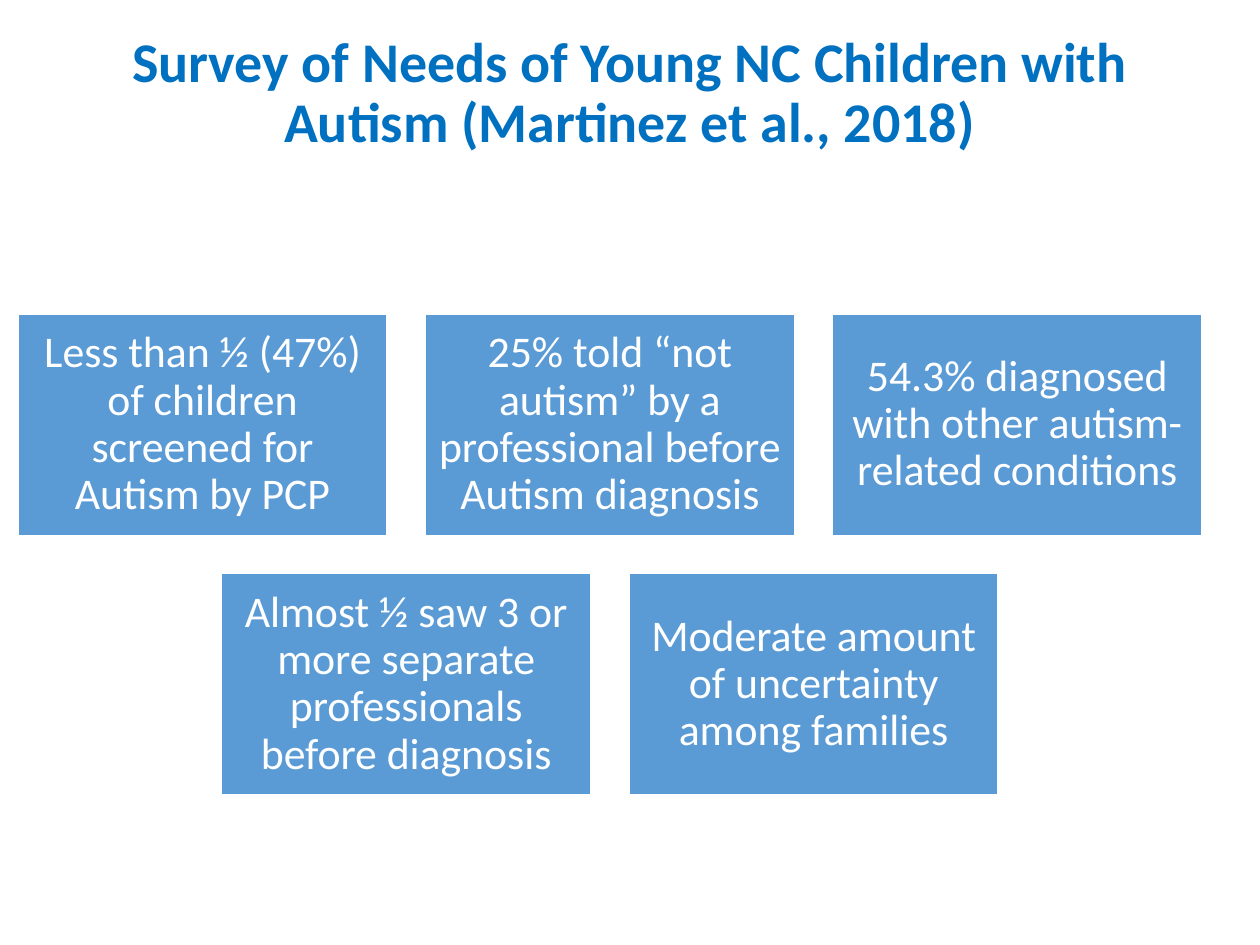
from pptx import Presentation
from pptx import util as u
from pptx.dml.color import RGBColor
from pptx.enum import shapes, text

FONT = "Calibri"
TITLE = "Survey of Needs of Young NC Children with Autism (Martinez et al., 2018)"
FINDING_ROWS = [
    [
        "Less than ½ (47%) of children screened for Autism by PCP",
        "25% told “not autism” by a professional before Autism diagnosis",
        "54.3% diagnosed with other autism-related conditions",
    ],
    [
        "Almost ½ saw 3 or more separate professionals before diagnosis",
        "Moderate amount of uncertainty among families",
    ],
]


def color(value):
    return RGBColor.from_string(value)


def write_text(frame, content, size, hex_color, bold=False):
    frame.word_wrap = True
    frame.auto_size = text.MSO_AUTO_SIZE.NONE
    frame.vertical_anchor = text.MSO_ANCHOR.MIDDLE
    paragraph = frame.paragraphs[0]
    paragraph.alignment = text.PP_ALIGN.CENTER
    paragraph.line_spacing = 0.9
    run = paragraph.add_run()
    run.text = content
    run.font.name = FONT
    run.font.size = u.Pt(size)
    run.font.bold = bold
    run.font.color.rgb = color(hex_color)


def place_title(slide, left, top, width, height):
    title = slide.shapes.title
    title.left, title.top = u.Inches(left), u.Inches(top)
    title.width, title.height = u.Inches(width), u.Inches(height)
    write_text(title.text_frame, TITLE, 32, "0070C0", bold=True)


def place_card(slide, content, left, top, width, height):
    card = slide.shapes.add_shape(
        shapes.MSO_SHAPE.RECTANGLE,
        u.Inches(left), u.Inches(top), u.Inches(width), u.Inches(height),
    )
    card.shadow.inherit = False
    card.fill.solid()
    card.fill.fore_color.rgb = color("5B9BD5")
    card.line.color.rgb = color("FFFFFF")
    card.line.width = u.Pt(1)
    frame = card.text_frame
    frame.margin_left = frame.margin_right = u.Inches(0.1)
    frame.margin_top = frame.margin_bottom = u.Inches(0.1)
    write_text(frame, content, 25, "FFFFFF")


def place_findings(slide, left, top, width, height):
    columns = max(len(row) for row in FINDING_ROWS)
    gap = 0.3
    card_width = (width - gap * (columns - 1)) / columns
    card_height = (height - gap * (len(FINDING_ROWS) - 1)) / len(FINDING_ROWS)
    for row_index, row in enumerate(FINDING_ROWS):
        row_width = len(row) * (card_width + gap) - gap
        row_left = left + (width - row_width) / 2
        row_top = top + row_index * (card_height + gap)
        for column, content in enumerate(row):
            card_left = row_left + column * (card_width + gap)
            place_card(slide, content, card_left, row_top, card_width, card_height)


def main():
    presentation = Presentation()
    presentation.slide_width = u.Inches(10)
    presentation.slide_height = u.Inches(7.5)
    slide = presentation.slides.add_slide(presentation.slide_layouts[5])
    place_title(slide, 0.6, 0.02, 8.8, 1.46)
    place_findings(slide, 0.14, 2.49, 9.4, 3.82)
    presentation.save("out.pptx")


if __name__ == "__main__":
    main()
